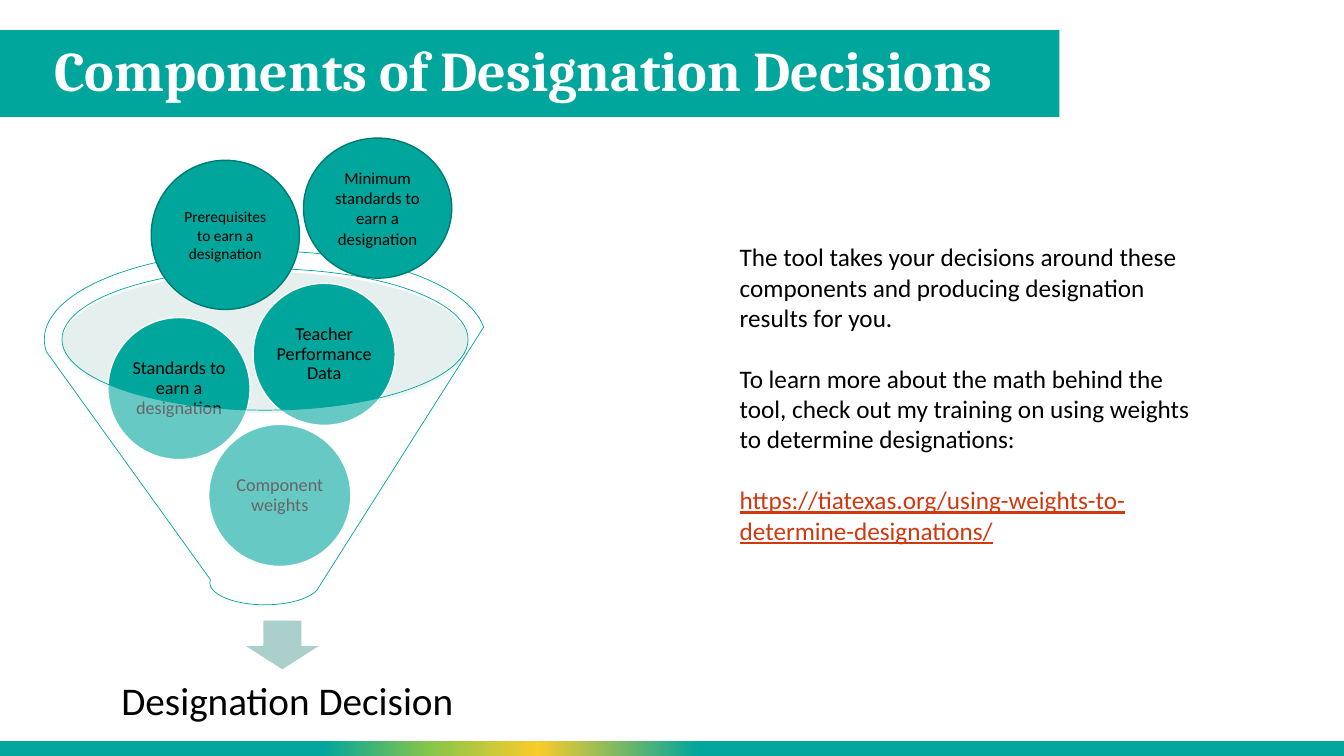
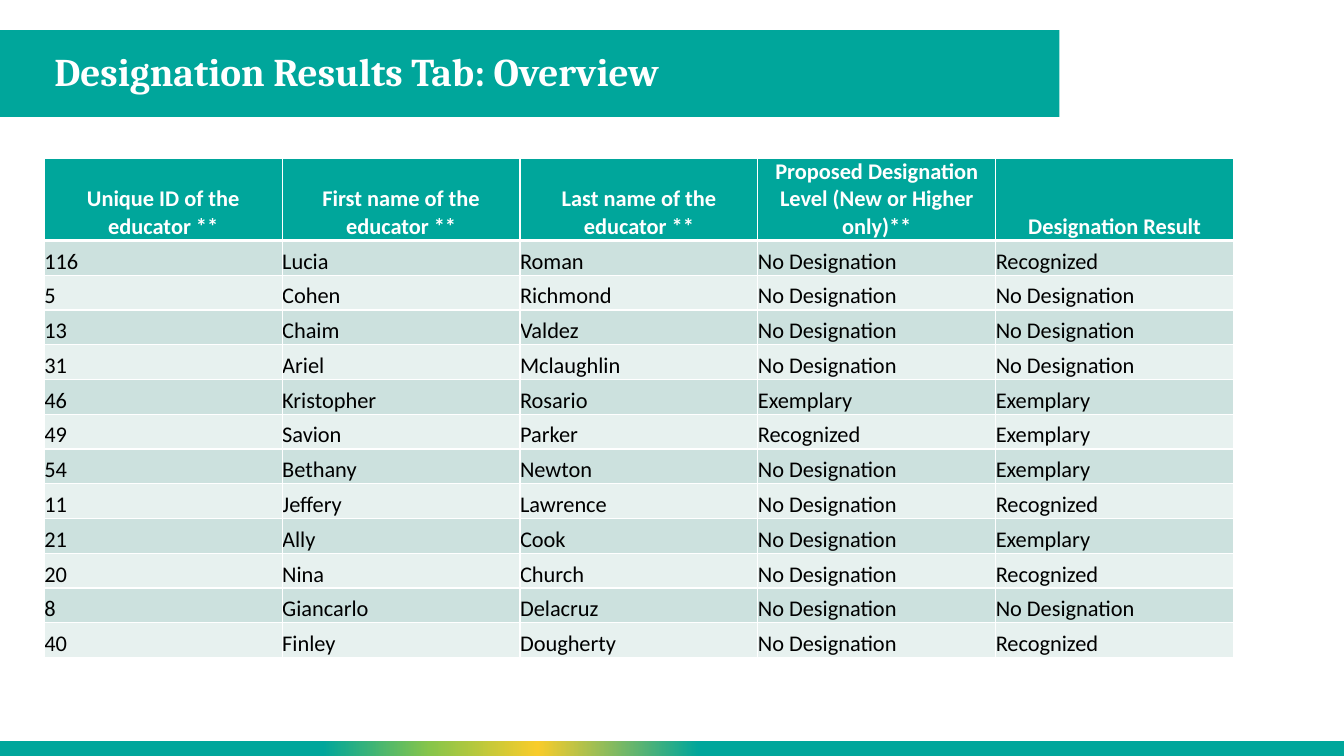
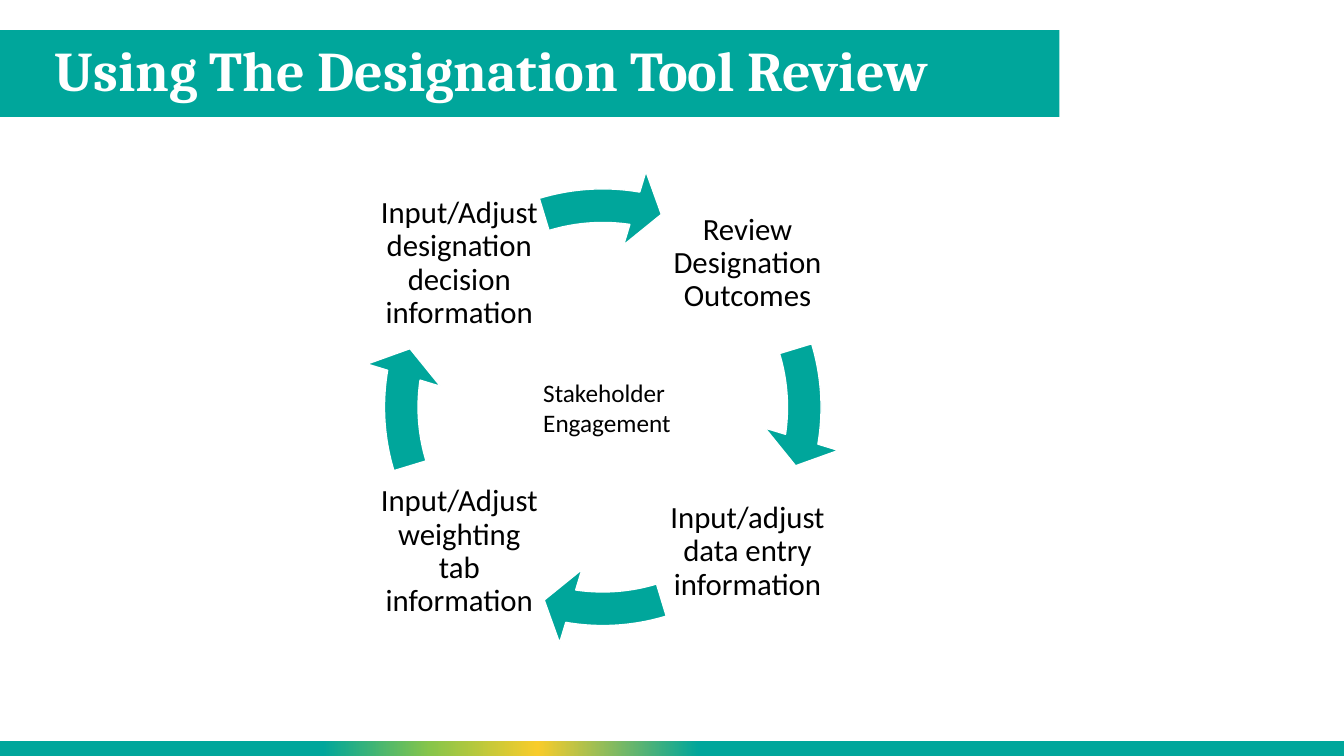
from dataclasses import dataclass
from typing import Optional

import lxml.etree
import pptx
import pptx.dml.color
import pptx.enum.shapes
import pptx.enum.text
import pptx.oxml
import pptx.oxml.ns
import pptx.util

SHAPE = pptx.enum.shapes.MSO_SHAPE
ALIGN = pptx.enum.text.PP_ALIGN
ANCHOR = pptx.enum.text.MSO_ANCHOR
qualified = pptx.oxml.ns.qn

SLIDE_WIDTH = pptx.util.Inches(13.33)
SLIDE_HEIGHT = pptx.util.Inches(7.5)


@dataclass(frozen=True)
class Theme:
    teal: str = "00A69B"
    dark_teal: str = "007B73"
    green: str = "87C54A"
    yellow: str = "F8CC2B"
    pale_rim: str = "BDD8D5"
    pale_arrow: str = "ABD0CB"
    band_dark: str = "CCE1DE"
    band_light: str = "E7F1EF"
    link: str = "D0380E"
    black: str = "000000"
    white: str = "FFFFFF"
    heading_font: str = "Cambria"
    body_font: str = "Calibri"
    title_size: int = 40
    small_title_size: int = 28
    result_size: int = 28
    cycle_size: int = 22
    body_size: int = 18
    table_size: int = 16
    circle_size: int = 13


THEME = Theme()


@dataclass(frozen=True)
class Box:
    """Left, top, width and height in percent of the slide."""

    left: float
    top: float
    width: float
    height: float

    def lengths(self) -> tuple[int, int, int, int]:
        return (
            round(SLIDE_WIDTH * self.left / 100),
            round(SLIDE_HEIGHT * self.top / 100),
            round(SLIDE_WIDTH * self.width / 100),
            round(SLIDE_HEIGHT * self.height / 100),
        )


@dataclass(frozen=True)
class Outline:
    color: str
    width: float = 1


@dataclass(frozen=True)
class Circle:
    text: str
    box: Box
    size: int = THEME.circle_size
    outline: Outline = Outline(THEME.white)
    inset: float = 0.02
    line_spacing: float = 0.9


@dataclass(frozen=True)
class CycleStep:
    text: str
    column: int
    row: int


TITLE_BOX = Box(3.3, 4, 75.45, 11.47)
BAND_BOX = Box(0, 4, 78.83, 11.47)
FOOTER_BOX = Box(0, 98, 100, 2)
FOOTER_STOPS = (
    (0, THEME.teal),
    (24, THEME.teal),
    (32, THEME.green),
    (40, THEME.yellow),
    (52, THEME.teal),
    (100, THEME.teal),
)

FUNNEL_CIRCLES = (
    Circle("Component weights", Box(15.53, 56.13, 10.58, 18.8)),
    Circle("Standards to earn a designation", Box(8.03, 42, 10.58, 18.8)),
    Circle("Teacher Performance Data", Box(18.83, 37.47, 10.58, 18.8)),
)
ENTERING_CIRCLES = (
    Circle("Prerequisites to earn a designation", Box(11.25, 21.2, 11.03, 19.73),
           11, Outline(THEME.dark_teal), 0.1, 1),
    Circle("Minimum standards to earn a designation", Box(22.58, 18.27, 11.03, 18.53),
           12, Outline(THEME.dark_teal), 0.1, 1),
)
EXPLANATION = (
    "The tool takes your decisions around these components and producing "
    "designation results for you.",
    "To learn more about the math behind the tool, check out my training on "
    "using weights to determine designations:",
    "https://tiatexas.org/using-weights-to-determine-designations/",
)

RESULT_HEADERS = (
    "Unique ID of the educator **",
    "First name of the educator **",
    "Last name of the educator **",
    "Proposed Designation Level (New or Higher only)**",
    "Designation Result",
)
RESULTS = (
    ("116", "Lucia", "Roman", "No Designation", "Recognized"),
    ("5", "Cohen", "Richmond", "No Designation", "No Designation"),
    ("13", "Chaim", "Valdez", "No Designation", "No Designation"),
    ("31", "Ariel", "Mclaughlin", "No Designation", "No Designation"),
    ("46", "Kristopher", "Rosario", "Exemplary", "Exemplary"),
    ("49", "Savion", "Parker", "Recognized", "Exemplary"),
    ("54", "Bethany", "Newton", "No Designation", "Exemplary"),
    ("11", "Jeffery", "Lawrence", "No Designation", "Recognized"),
    ("21", "Ally", "Cook", "No Designation", "Exemplary"),
    ("20", "Nina", "Church", "No Designation", "Recognized"),
    ("8", "Giancarlo", "Delacruz", "No Designation", "No Designation"),
    ("40", "Finley", "Dougherty", "No Designation", "Recognized"),
)
HEADER_HEIGHT = 10.85
ROW_HEIGHT = 4.6

CYCLE_STEPS = (
    CycleStep("Review Designation Outcomes", 1, 0),
    CycleStep("Input/adjust data entry information", 1, 1),
    CycleStep("Input/Adjust weighting tab information", 0, 1),
    CycleStep("Input/Adjust designation decision information", 0, 0),
)


def rgb(color: str) -> pptx.dml.color.RGBColor:
    return pptx.dml.color.RGBColor.from_string(color)


def set_font(paragraph, size: int, color: str = THEME.black,
             name: str = THEME.body_font, bold: bool = False) -> None:
    font = paragraph.font
    font.name = name
    font.size = pptx.util.Pt(size)
    font.bold = bold
    font.color.rgb = rgb(color)


def set_text(shape, lines: tuple[str, ...], size: int, align=ALIGN.CENTER,
             anchor=ANCHOR.MIDDLE, inset: Optional[float] = None,
             line_spacing: float = 1, gap: float = 0) -> None:
    frame = shape.text_frame
    frame.word_wrap = True
    frame.vertical_anchor = anchor
    if inset is not None:
        frame.margin_left = frame.margin_right = pptx.util.Inches(inset)
        frame.margin_top = frame.margin_bottom = pptx.util.Inches(inset)
    for index, line in enumerate(lines):
        paragraph = frame.add_paragraph() if index else frame.paragraphs[0]
        paragraph.text = line
        paragraph.alignment = align
        paragraph.line_spacing = line_spacing
        if index and gap:
            paragraph.space_before = pptx.util.Pt(gap)
        set_font(paragraph, size)


def add_shape(slide, kind, box: Box, fill: str, outline: Optional[Outline] = None,
              opacity: int = 100):
    shape = slide.shapes.add_shape(kind, *box.lengths())
    shape.shadow.inherit = False
    shape.fill.solid()
    shape.fill.fore_color.rgb = rgb(fill)
    if opacity < 100:
        color = shape._element.spPr.find(".//" + qualified("a:srgbClr"))
        lxml.etree.SubElement(color, qualified("a:alpha"), val=str(opacity * 1000))
    if outline:
        shape.line.color.rgb = rgb(outline.color)
        shape.line.width = pptx.util.Pt(outline.width)
    else:
        shape.line.fill.background()
    return shape


def add_text(slide, box: Box, lines: tuple[str, ...], size: int, **options):
    shape = slide.shapes.add_textbox(*box.lengths())
    set_text(shape, lines, size, **options)
    return shape


def add_circle(slide, circle: Circle) -> None:
    shape = add_shape(slide, SHAPE.OVAL, circle.box, THEME.teal, circle.outline)
    set_text(shape, (circle.text,), circle.size, inset=circle.inset,
             line_spacing=circle.line_spacing)


def set_gradient(shape, stops: tuple[tuple[int, str], ...]) -> None:
    shape.fill.gradient()
    shape.fill.gradient_angle = 0
    stop_list = shape._element.spPr.find(".//" + qualified("a:gsLst"))
    stop_list.clear()
    for position, color in stops:
        stop = lxml.etree.SubElement(stop_list, qualified("a:gs"), pos=str(position * 1000))
        lxml.etree.SubElement(stop, qualified("a:srgbClr"), val=color)


def furnish_layout(layout, slide) -> None:
    band = add_shape(slide, SHAPE.RECTANGLE, BAND_BOX, THEME.teal)
    footer = add_shape(slide, SHAPE.RECTANGLE, FOOTER_BOX, THEME.teal)
    set_gradient(footer, FOOTER_STOPS)
    for index, shape in enumerate((band, footer)):
        shape._element.nvSpPr.cNvPr.set("id", str(100 + index))
        layout.shapes._spTree.insert(2 + index, shape._element)
    title = layout.placeholders[0]
    title.left, title.top, title.width, title.height = TITLE_BOX.lengths()


def add_slide(presentation, layout, title: str, size: int = THEME.title_size):
    slide = presentation.slides.add_slide(layout)
    frame = slide.shapes.title.text_frame
    frame.text = title
    frame.word_wrap = True
    frame.auto_size = pptx.enum.text.MSO_AUTO_SIZE.NONE
    frame.vertical_anchor = ANCHOR.MIDDLE
    paragraph = frame.paragraphs[0]
    paragraph.alignment = ALIGN.LEFT
    paragraph.line_spacing = 0.9
    set_font(paragraph, size, THEME.white, THEME.heading_font, True)
    return slide


def draw_components(slide) -> None:
    add_shape(slide, SHAPE.OVAL, Box(4.58, 36, 30.3, 18.67), THEME.pale_rim, opacity=40)
    add_shape(slide, SHAPE.DOWN_ARROW, Box(18.08, 82, 5.85, 6.67), THEME.pale_arrow,
              Outline(THEME.white))
    add_text(slide, Box(7.28, 86.67, 28.2, 12.53), ("Designation Decision",),
             THEME.result_size, inset=0.22, line_spacing=0.9)
    for circle in FUNNEL_CIRCLES:
        add_circle(slide, circle)
    add_shape(slide, SHAPE.FUNNEL, Box(3.3, 33.2, 32.85, 46.8), THEME.white,
              Outline(THEME.teal, 0.5), opacity=40)
    for circle in ENTERING_CIRCLES:
        add_circle(slide, circle)
    explanation = add_text(slide, Box(54.3, 31.33, 35.48, 41.73), EXPLANATION,
                           THEME.body_size, align=ALIGN.LEFT, anchor=ANCHOR.TOP, gap=22)
    address = explanation.text_frame.paragraphs[-1]
    address.font.color.rgb = rgb(THEME.link)
    address.font.underline = True


def set_borders(cell, bottom: int) -> None:
    properties = cell._tc.get_or_add_tcPr()
    for side, width in (("L", 1), ("R", 1), ("T", 1), ("B", bottom)):
        line = lxml.etree.SubElement(properties, qualified(f"a:ln{side}"),
                                     w=str(pptx.util.Pt(width)))
        fill = lxml.etree.SubElement(line, qualified("a:solidFill"))
        lxml.etree.SubElement(fill, qualified("a:srgbClr"), val=THEME.white)


def draw_results(slide) -> None:
    box = Box(3.3, 20.93, 88.5, HEADER_HEIGHT + ROW_HEIGHT * len(RESULTS))
    rows = (RESULT_HEADERS, *RESULTS)
    table = slide.shapes.add_table(len(rows), len(RESULT_HEADERS), *box.lengths()).table
    table.horz_banding = False
    for row_index, row in enumerate(rows):
        header = row_index == 0
        height = HEADER_HEIGHT if header else ROW_HEIGHT
        table.rows[row_index].height = round(SLIDE_HEIGHT * height / 100)
        banding = THEME.band_dark if row_index % 2 else THEME.band_light
        for column_index, value in enumerate(row):
            cell = table.cell(row_index, column_index)
            set_borders(cell, 3 if header else 1)
            cell.fill.solid()
            cell.fill.fore_color.rgb = rgb(THEME.teal if header else banding)
            cell.vertical_anchor = ANCHOR.BOTTOM
            cell.margin_left = cell.margin_right = 0
            cell.margin_top = cell.margin_bottom = 0
            cell.text = value
            paragraph = cell.text_frame.paragraphs[0]
            paragraph.alignment = ALIGN.CENTER if header else ALIGN.LEFT
            set_font(paragraph, THEME.table_size,
                     THEME.white if header else THEME.black, bold=header)


def draw_cycle(slide) -> None:
    adjustment_per_degree = 0.6
    for index, step in enumerate(CYCLE_STEPS):
        box = Box(27.83 + 21.45 * step.column, 23.6 + 38.13 * step.row, 12.68, 22.53)
        add_text(slide, box, (step.text,), THEME.cycle_size, inset=0.03, line_spacing=0.9)
        arrow = add_shape(slide, SHAPE.CIRCULAR_ARROW, Box(27, 22.13, 35.7, 63.47),
                          THEME.teal, Outline(THEME.white))
        turn = 90 * index
        arrow.adjustments[0] = 0.07
        arrow.adjustments[1] = 7.76 * adjustment_per_degree
        arrow.adjustments[2] = (9.14 + turn) * adjustment_per_degree
        arrow.adjustments[3] = (343.1 + turn) % 360 * adjustment_per_degree
        arrow.adjustments[4] = 0.08
    add_text(slide, Box(39.68, 49.2, 12.45, 9.47), ("Stakeholder", "Engagement"),
             THEME.body_size, align=ALIGN.LEFT, anchor=ANCHOR.TOP)


def main() -> None:
    presentation = pptx.Presentation()
    presentation.slide_width = SLIDE_WIDTH
    presentation.slide_height = SLIDE_HEIGHT
    layout = presentation.slide_layouts.get_by_name("Title Only")
    components = add_slide(presentation, layout, "Components of Designation Decisions")
    furnish_layout(layout, components)
    draw_components(components)
    draw_results(add_slide(presentation, layout, "Designation Results Tab: Overview",
                           THEME.small_title_size))
    draw_cycle(add_slide(presentation, layout, "Using The Designation Tool Review"))
    presentation.save("out.pptx")


if __name__ == "__main__":
    main()
